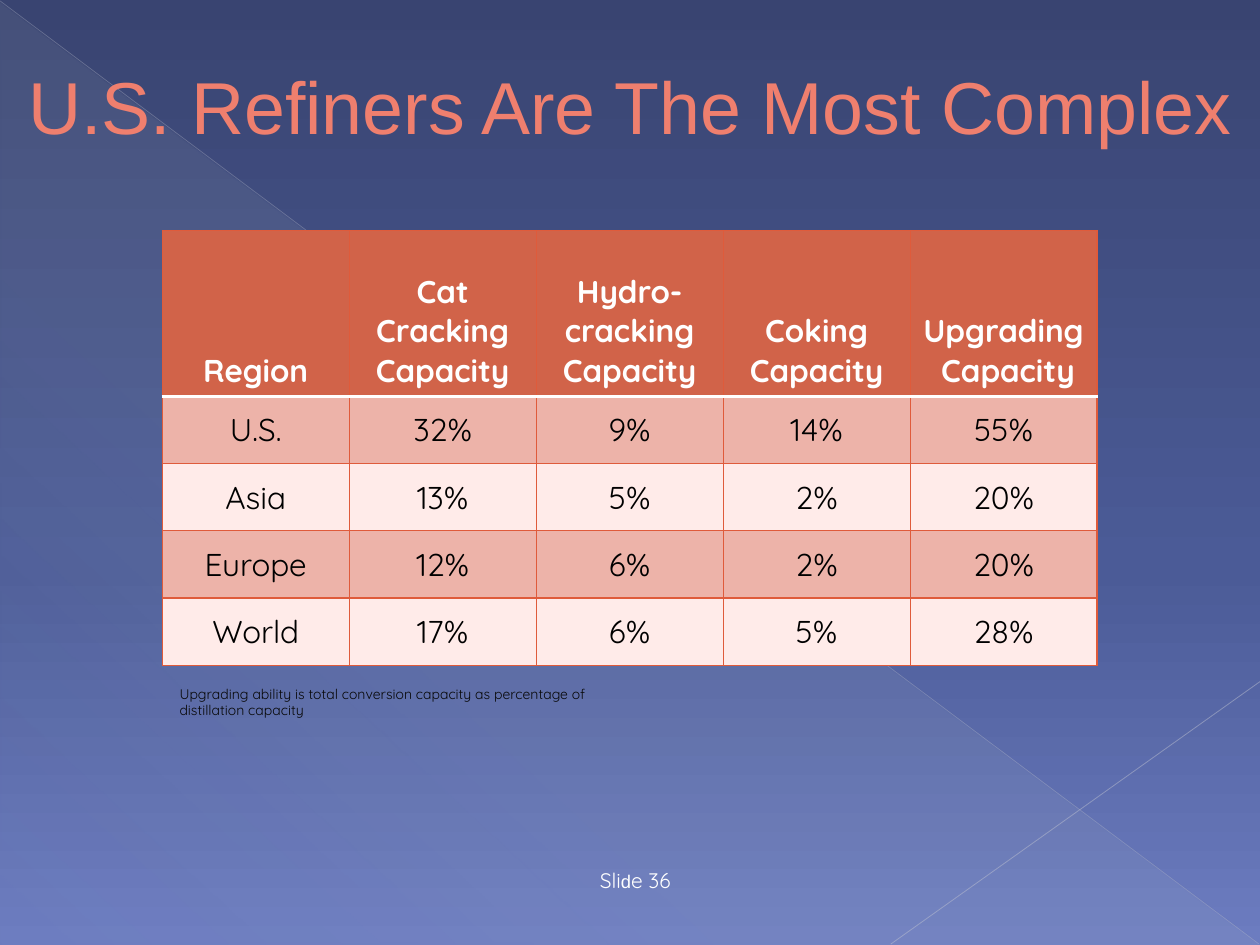
from dataclasses import dataclass

from lxml import etree
from pptx import Presentation
from pptx import util as u
from pptx.dml import color
from pptx.enum import shapes, text
from pptx.oxml import ns

Pt = u.Pt
CENTER = text.PP_ALIGN.CENTER
BOTTOM = text.MSO_ANCHOR.BOTTOM
MIDDLE = text.MSO_ANCHOR.MIDDLE


@dataclass(frozen=True)
class Theme:
    face: str = "Quicksand"
    title_face: str = "Arial"
    title_size: float = 42
    table_size: float = 18
    footer_size: float = 12
    footer_small: float = 10.5
    note_size: float = 8
    title: str = "EF7F6E"
    title_edge: str = "914533"
    white: str = "FFFFFF"
    black: str = "000000"
    note: str = "080808"
    header: str = "D16349"
    band: str = "EDB3A9"
    plain: str = "FFEBE9"
    grid: str = "DF5B3B"
    sky: tuple = ((0, "394471", 100), (60, "4B5B97", 100), (100, "6C7CC0", 100))
    haze: tuple = ((0, "C5D1D7", 10), (70, "C5D1D7", 8), (100, "C5D1D7", 1))


THEME = Theme()
HEADINGS = ["Region", "Cat Cracking Capacity", "Hydro-cracking Capacity",
            "Coking Capacity", "Upgrading\n Capacity"]
REGIONS = [
    ["U.S.", "32%", "9%", "14%", "55%"],
    ["Asia", "13%", "5%", "2%", "20%"],
    ["Europe", "12%", "6%", "2%", "20%"],
    ["World", "17%", "6%", "5%", "28%"],
]


def rgb(code):
    return color.RGBColor.from_string(code)


def add_node(parent, tag, **values):
    node = etree.SubElement(parent, ns.qn(tag))
    for name, value in values.items():
        node.set(name, str(value))
    return node


def add_color(parent, code, opacity=100):
    node = add_node(parent, "a:srgbClr", val=code)
    if opacity < 100:
        add_node(node, "a:alpha", val=opacity * 1000)


def set_gradient(fill, owner, stops, angle):
    """Give fill, which lies inside the XML element owner, these colour stops."""
    fill.gradient()
    gradient = owner.find(".//" + ns.qn("a:gradFill"))
    for child in list(gradient):
        gradient.remove(child)
    stop_list = add_node(gradient, "a:gsLst")
    for place, code, opacity in stops:
        add_color(add_node(stop_list, "a:gs", pos=place * 1000), code, opacity)
    add_node(gradient, "a:lin", ang=angle * 60000, scaled=0)


def format_font(font, code, **values):
    for name, value in values.items():
        setattr(font, name, value)
    font.color.rgb = rgb(code)


def add_haze(page, left, top, width, height):
    triangle = page.shapes.add_shape(shapes.MSO_SHAPE.RIGHT_TRIANGLE,
                                     Pt(left), Pt(top), Pt(width), Pt(height))
    triangle.shadow.inherit = False
    triangle.line.fill.background()
    set_gradient(triangle.fill, triangle.element, THEME.haze, 133)


def add_ray(page, start, end, code, width, opacity):
    ray = page.shapes.add_connector(shapes.MSO_CONNECTOR.STRAIGHT,
                                    *map(Pt, start + end))
    ray.line.width = Pt(width)
    ray.line.color.rgb = rgb(code)
    tint = ray.element.find(".//" + ns.qn("a:srgbClr"))
    add_node(tint, "a:alpha", val=opacity * 1000)
    add_node(ray.element.spPr, "a:effectLst")


def set_title(page, wording):
    title = page.shapes.title
    page.shapes.element.append(title.element)  # in front of the backdrop
    place = {"left": 0, "top": 22.5, "width": 720, "height": 75}
    for name, value in place.items():
        setattr(title, name, Pt(value))
    frame = title.text_frame
    frame.vertical_anchor = MIDDLE
    para = frame.paragraphs[0]
    para.alignment = CENTER
    span = para.add_run()
    span.text = wording
    format_font(span.font, THEME.title, name=THEME.title_face,
                size=Pt(THEME.title_size))
    edge = etree.Element(ns.qn("a:ln"), w=str(Pt(0.5)))
    add_color(add_node(edge, "a:solidFill"), THEME.title_edge)
    span.font._element.insert(0, edge)


def add_text(page, place, spans, code, **frame_values):
    """Add a one-paragraph box; spans are (wording, face, size)."""
    box = page.shapes.add_textbox(*map(Pt, place))
    box.text_frame.word_wrap = True
    for name, value in frame_values.items():
        setattr(box.text_frame, name, value)
    para = box.text_frame.paragraphs[0]
    for wording, face, size in spans:
        span = para.add_run()
        span.text = wording
        format_font(span.font, code, name=face, size=Pt(size))
    return para


def set_borders(cell, top, bottom):
    """Draw grid lines; top and bottom are (colour, width)."""
    side = (THEME.grid, 0.75)
    edges = {"a:lnL": side, "a:lnR": side, "a:lnT": top, "a:lnB": bottom}
    props = cell._tc.get_or_add_tcPr()
    for index, (tag, (code, width)) in enumerate(edges.items()):
        edge = etree.Element(ns.qn(tag), w=str(Pt(width)))
        add_color(add_node(edge, "a:solidFill"), code)
        props.insert(index, edge)


def fill_cell(cell, wording, row):
    heading = row == 0
    cell.text = wording
    cell.vertical_anchor = BOTTOM if heading else MIDDLE
    for para in cell.text_frame.paragraphs:
        para.alignment = CENTER
        for span in para.runs:
            format_font(span.font, THEME.white if heading else THEME.black,
                        name=THEME.face, size=Pt(THEME.table_size), bold=heading)
    band = THEME.band if row % 2 else THEME.plain
    cell.fill.solid()
    cell.fill.fore_color.rgb = rgb(THEME.header if heading else band)
    thin, rule = (THEME.grid, 0.75), (THEME.white, 2)
    set_borders(cell, rule if row == 1 else thin, rule if heading else thin)


def add_capacity_table(page):
    rows = [HEADINGS] + REGIONS
    column_width, header_height, row_height = 106.86, 95, 38.4
    table = page.shapes.add_table(
        len(rows), len(HEADINGS), Pt(92.7), Pt(131.6),
        Pt(column_width * len(HEADINGS)),
        Pt(header_height + row_height * len(REGIONS))).table
    for column in table.columns:
        column.width = Pt(column_width)
    for index, values in enumerate(rows):
        table.rows[index].height = Pt(row_height if index else header_height)
        for column, wording in enumerate(values):
            fill_cell(table.cell(index, column), wording, index)


def main():
    deck = Presentation()
    deck.slide_width, deck.slide_height = Pt(720), Pt(540)
    page = deck.slides.add_slide(deck.slide_layouts[5])
    set_gradient(page.background.fill, page.element, THEME.sky, 90)
    add_haze(page, 0.5, 1.5, 719, 538.5)
    add_ray(page, (0, 0.5), (719.5, 539.5), "BABECD", 0.39, 35)
    add_ray(page, (720, 389.5), (509, 539.5), "C2C5D2", 0.47, 45)
    set_title(page, "U.S. Refiners Are The Most Complex")
    add_capacity_table(page)
    footer = add_text(page, (288, 489.6, 150, 24),
                      [("Sli", THEME.face, THEME.footer_size),
                       ("d", THEME.title_face, THEME.footer_small),
                       ("e 36", THEME.face, THEME.footer_size)],
                      THEME.white, vertical_anchor=BOTTOM)
    footer.alignment = CENTER
    note = ("Upgrading ability is total conversion capacity "
            "as percentage of distillation capacity")
    add_text(page, (95.5, 388, 276, 27), [(note, THEME.face, THEME.note_size)],
             THEME.note, auto_size=text.MSO_AUTO_SIZE.SHAPE_TO_FIT_TEXT)
    deck.save("out.pptx")


if __name__ == "__main__":
    main()
